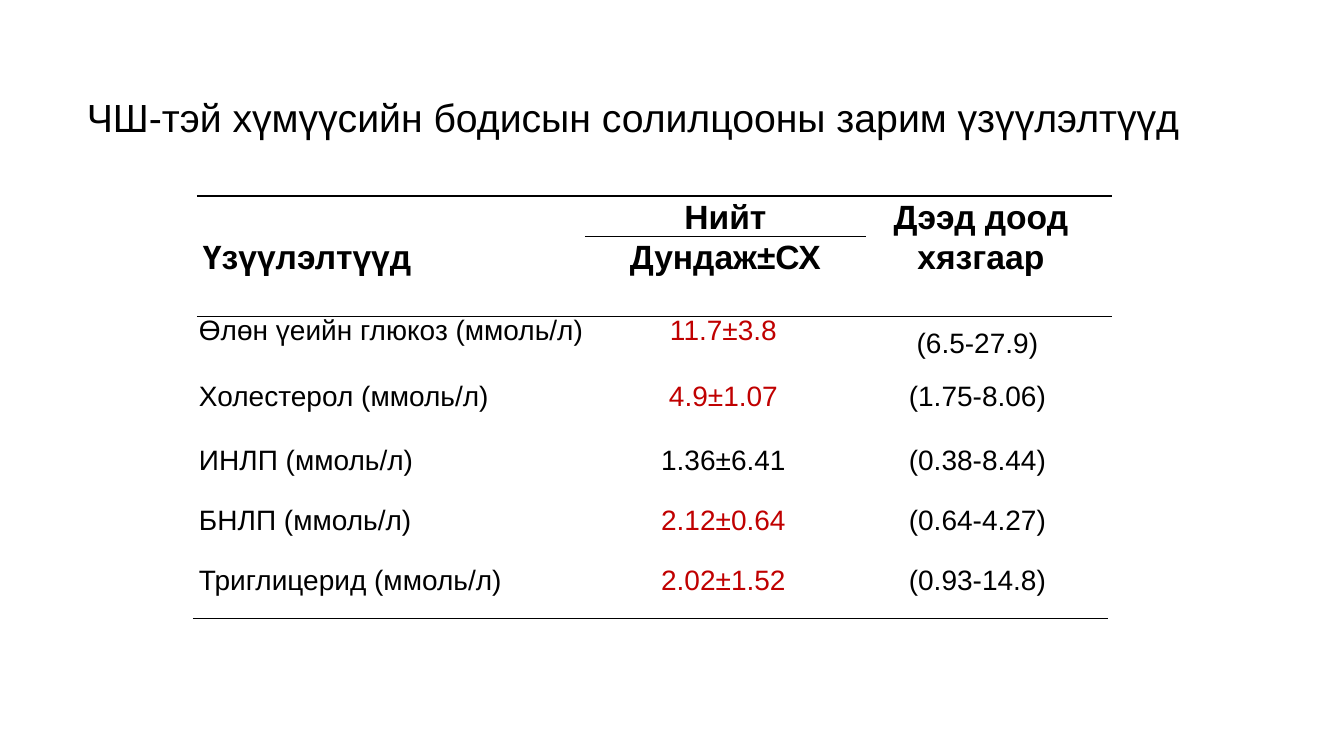
from lxml import etree
from pptx import Presentation
from pptx import util as u
from pptx.dml.color import RGBColor
from pptx.enum import text
from pptx.oxml import ns

# Content
TITLE = "ЧШ-тэй хүмүүсийн бодисын солилцооны зарим үзүүлэлтүүд"
HEADER = [
    ["Үзүүлэлтүүд", "Нийт", "Дээд доод хязгаар", ""],
    ["", "Дундаж±СХ", "", ""],
]
# indicator, mean±SD, range, mean highlighted
INDICATORS = [
    ("Өлөн үеийн глюкоз (ммоль/л)", "11.7±3.8", "(6.5-27.9)", True),
    ("Холестерол (ммоль/л)", "4.9±1.07", "(1.75-8.06)", True),
    ("ИНЛП (ммоль/л)", "1.36±6.41", "(0.38-8.44)", False),
    ("БНЛП (ммоль/л)", "2.12±0.64", "(0.64-4.27)", True),
    ("Триглицерид (ммоль/л)", "2.02±1.52", "(0.93-14.8)", True),
]

# Layout in px
WIDTH, HEIGHT = 1344, 756
TITLE_BOX = (27, 39, 1266, 162)
TITLE_INDENT = 50
HEADER_AT, HEADER_COLS, HEADER_ROWS = (197, 196), [388, 281, 230, 15], [40, 80]
BODY_AT, BODY_COLS, BODY_ROWS = (193, 313), [407, 247, 261], [53, 64, 60, 60, 69]

COLORS = {"text": "000000", "high": "C00000", "rule": "000000"}
FONT = "Arial"
NO_STYLE = "{2D5ABB26-0587-4C30-8999-92F81FD0307C}"
LEFT, CENTER, JUSTIFY = (text.PP_ALIGN.LEFT, text.PP_ALIGN.CENTER,
                         text.PP_ALIGN.JUSTIFY)
TOP, MIDDLE = text.MSO_ANCHOR.TOP, text.MSO_ANCHOR.MIDDLE


def px(n):
    return u.Emu(n * 9525 * 960 // 1008)


def write(tf, words, size=20, color="text", bold=False, align=LEFT, spacing=1.5):
    p = tf.paragraphs[0]
    p.alignment, p.line_spacing = align, spacing
    p.font.size = u.Pt(size)
    if words:
        r = p.add_run()
        r.text = words
        r.font.name, r.font.size, r.font.bold = FONT, u.Pt(size), bold
        r.font.color.rgb = RGBColor.from_string(COLORS[color])
    return p


def add_table(s, at, cols, rows):
    frame = s.shapes.add_table(len(rows), len(cols), *map(px, at),
                               px(sum(cols)), px(sum(rows)))
    table = frame.table
    table.first_row = table.horz_banding = False
    table._tbl.tblPr.find(ns.qn("a:tableStyleId")).text = NO_STYLE
    for column, width in zip(table.columns, cols):
        column.width = px(width)
    for row, height in zip(table.rows, rows):
        row.height = px(height)
    return table


def format_cell(cell, rules="", anchor=TOP, inset=6):
    cell.margin_left = cell.margin_right = px(inset)
    cell.margin_top = cell.margin_bottom = 0
    cell.vertical_anchor = anchor
    tcPr = cell._tc.get_or_add_tcPr()
    for side in rules:
        ln = etree.SubElement(tcPr, ns.qn("a:ln" + side), w=str(u.Pt(1)))
        fill = etree.SubElement(ln, ns.qn("a:solidFill"))
        etree.SubElement(fill, ns.qn("a:srgbClr"), val=COLORS["rule"])
    cell.fill.background()


prs = Presentation()
prs.slide_width, prs.slide_height = px(WIDTH), px(HEIGHT)
s = prs.slides.add_slide(prs.slide_layouts[6])

# Indicator values
body = add_table(s, BODY_AT, BODY_COLS, BODY_ROWS)
for i, (name, mean, limits, high) in enumerate(INDICATORS):
    tight = 1.07 if i == 0 else 1.5
    rules = "B" if i == len(INDICATORS) - 1 else ""
    formats = [
        (name, dict(spacing=tight)),
        (mean, dict(spacing=tight, align=CENTER, color="high" if high else "text")),
        (limits, dict(align=CENTER)),
    ]
    for j, (words, style) in enumerate(formats):
        cell = body.cell(i, j)
        format_cell(cell, rules, inset=7 if j == 2 else 6)
        write(cell.text_frame, words, **style)

# Column headings: all but the second column span both rows
header = add_table(s, HEADER_AT, HEADER_COLS, HEADER_ROWS)
for j in range(len(HEADER_COLS)):
    spans = j != 1
    for i in range(len(HEADER_ROWS)):
        cell = header.cell(i, j)
        rules = "TB" if i == 0 or not spans else "B"
        format_cell(cell, rules, anchor=MIDDLE if j == 0 else TOP)
        write(cell.text_frame, HEADER[i][j], size=24, bold=True, spacing=1.07,
              align=JUSTIFY if j == 0 else CENTER)
    if spans:
        header.cell(0, j).merge(header.cell(1, j))

# Title
sp = s.shapes.add_textbox(*map(px, TITLE_BOX))
tf = sp.text_frame
tf.word_wrap, tf.vertical_anchor = True, MIDDLE
p = write(tf, TITLE, size=28, spacing=0.9)
pPr = p._p.get_or_add_pPr()
pPr.set("marL", "0")
pPr.set("indent", str(px(TITLE_INDENT)))

prs.save("out.pptx")
